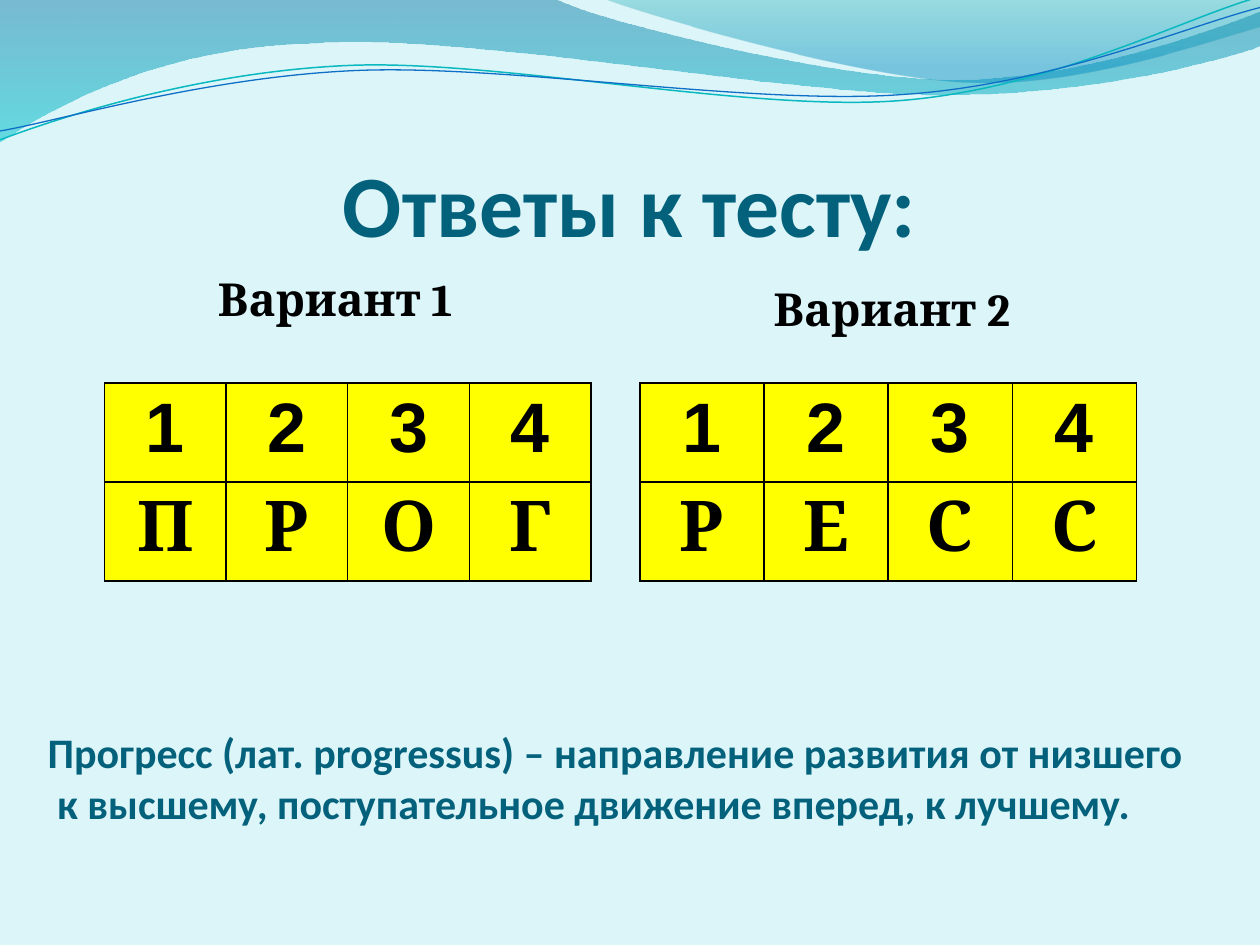
from lxml import etree
from pptx import Presentation
from pptx.dml.color import RGBColor
from pptx.enum import text
from pptx.oxml.ns import qn
from pptx.util import Inches, Pt

BLACK, TEAL, YELLOW = "000000", "04617B", "FFFF00"


def rgb(value):
    return RGBColor.from_string(value)


def add_run(p, words, size, font, color):
    r = p.add_run()
    r.text = words
    r.font.size, r.font.name, r.font.bold = Pt(size), font, True
    r.font.color.rgb = rgb(color)


prs = Presentation()
prs.slide_width, prs.slide_height = Inches(10), Inches(7.5)
s = prs.slides.add_slide(prs.slide_layouts[6])
s.background.fill.solid()
s.background.fill.fore_color.rgb = rgb("DBF5F9")

# Waves in hundredths of an inch: straight (2 numbers) or Bezier (6) segments
waves = [
    # segments, gradient stops (position, colour, opacity), line (colour, width)
    ([(0, 0), (440, -1), (476, 17, 664, 63, 758, 63),
      (853, 63, 958, 26, 1000, 9), (1001, 36),
      (983, 44, 870, 76, 746, 75), (622, 75, 382, 28, 257, 34),
      (129, 36, 46, 83, -1, 113)],
     [(0, "0074A1", 45), (1, "00C6CF", 55)], None),
    ([(479, -1), (509, 11, 682, 62, 769, 65),
      (856, 69, 961, 32, 1000, 21), (1000, 0)],
     [(0, "00A1A9", 30), (0.8, "008BBF", 45)], None),
    ([(0, 111), (48, 93, 158, 57, 277, 52),
      (395, 47, 593, 89, 713, 80), (833, 71, 938, 15, 998, -2)],
     None, ("0AB8BF", 0.85)),
    ([(0, 104), (47, 96, 164, 61, 283, 56),
      (403, 51, 597, 84, 717, 75), (836, 67, 941, 21, 1000, 6)],
     None, ("0F6FC6", 0.75)),
]
for segments, stops, line in waves:
    ends = [seg[-2:] for seg in segments]
    left, top = (min(values) for values in zip(*ends))
    fb = s.shapes.build_freeform(*ends[0], scale=Inches(0.01))
    fb.add_line_segments(ends[1:], close=bool(stops))
    sp = fb.convert_to_shape()
    sp.shadow.inherit = False
    # Bend the segments that have control points
    for straight, seg in zip(list(sp._element.iter(qn("a:lnTo"))), segments[1:]):
        if len(seg) == 6:
            curve = etree.Element(qn("a:cubicBezTo"))
            for x, y in zip(seg[::2], seg[1::2]):
                etree.SubElement(curve, qn("a:pt"), x=str(x - left), y=str(y - top))
            straight.getparent().replace(straight, curve)
    if stops:
        sp.line.fill.background()
        sp.fill.gradient()
        sp.fill.gradient_angle = 270
        for stop, (position, color, _) in zip(sp.fill.gradient_stops, stops):
            stop.position, stop.color.rgb = position, rgb(color)
        colors = sp._element.spPr.iter(qn("a:srgbClr"))
        for clr, (_, _, opacity) in zip(colors, stops):
            etree.SubElement(clr, qn("a:alpha")).set("val", str(opacity * 1000))
    else:
        sp.fill.background()
        sp.line.color.rgb, sp.line.width = rgb(line[0]), Pt(line[1])

# Title
tf = s.shapes.add_textbox(Inches(0.5), Inches(0.77), Inches(9), Inches(1.25)).text_frame
tf.word_wrap = True
tf.vertical_anchor = text.MSO_ANCHOR.BOTTOM
tf.margin_left = tf.margin_right = tf.margin_bottom = 0
tf.paragraphs[0].alignment = text.PP_ALIGN.CENTER
add_run(tf.paragraphs[0], "Ответы к тесту:", 50, "Calibri", TEAL)

# Variant headings
for words, x, y, h, inset in [("Вариант 1", 0.51, 2.1, 4.85, 1.22),
                              ("Вариант 2", 5.08, 2.18, 4.77, 1.06)]:
    tf = s.shapes.add_textbox(Inches(x), Inches(y), Inches(4.42), Inches(h)).text_frame
    tf.word_wrap = True
    tf.margin_left = Inches(inset)
    tf.paragraphs[0].space_before = Pt(5.2)
    add_run(tf.paragraphs[0], words, 26, "Cambria", BLACK)

# Answer tables
for letters, x, width in [("ПРОГ", 0.83, 3.86), ("РЕСС", 5.08, 3.94)]:
    table = s.shapes.add_table(2, 4, Inches(x), Inches(3.04),
                               Inches(width), Inches(1.57)).table
    table.first_row = table.horz_banding = False
    for row, (values, font) in enumerate([("1234", "Arial"), (letters, "Cambria")]):
        for col, value in enumerate(values):
            cell = table.cell(row, col)
            p = cell.text_frame.paragraphs[0]
            p.alignment = text.PP_ALIGN.CENTER
            add_run(p, value, 40, font, BLACK)
            tcPr = cell._tc.get_or_add_tcPr()
            for side in ("a:lnL", "a:lnR", "a:lnT", "a:lnB"):
                ln = etree.SubElement(tcPr, qn(side), w=str(Pt(1)))
                fill = etree.SubElement(ln, qn("a:solidFill"))
                etree.SubElement(fill, qn("a:srgbClr"), val=BLACK)
            cell.fill.solid()
            cell.fill.fore_color.rgb = rgb(YELLOW)

# Definition
tf = s.shapes.add_textbox(Inches(0.28), Inches(5.72), Inches(9.45), Inches(0.91)).text_frame
tf.word_wrap = True
add_run(tf.paragraphs[0], "Прогресс (лат. progressus) – направление развития от низшего",
        24, "Calibri", TEAL)
add_run(tf.add_paragraph(), " к высшему, поступательное движение вперед, к лучшему.",
        24, "Calibri", TEAL)

prs.save("out.pptx")
